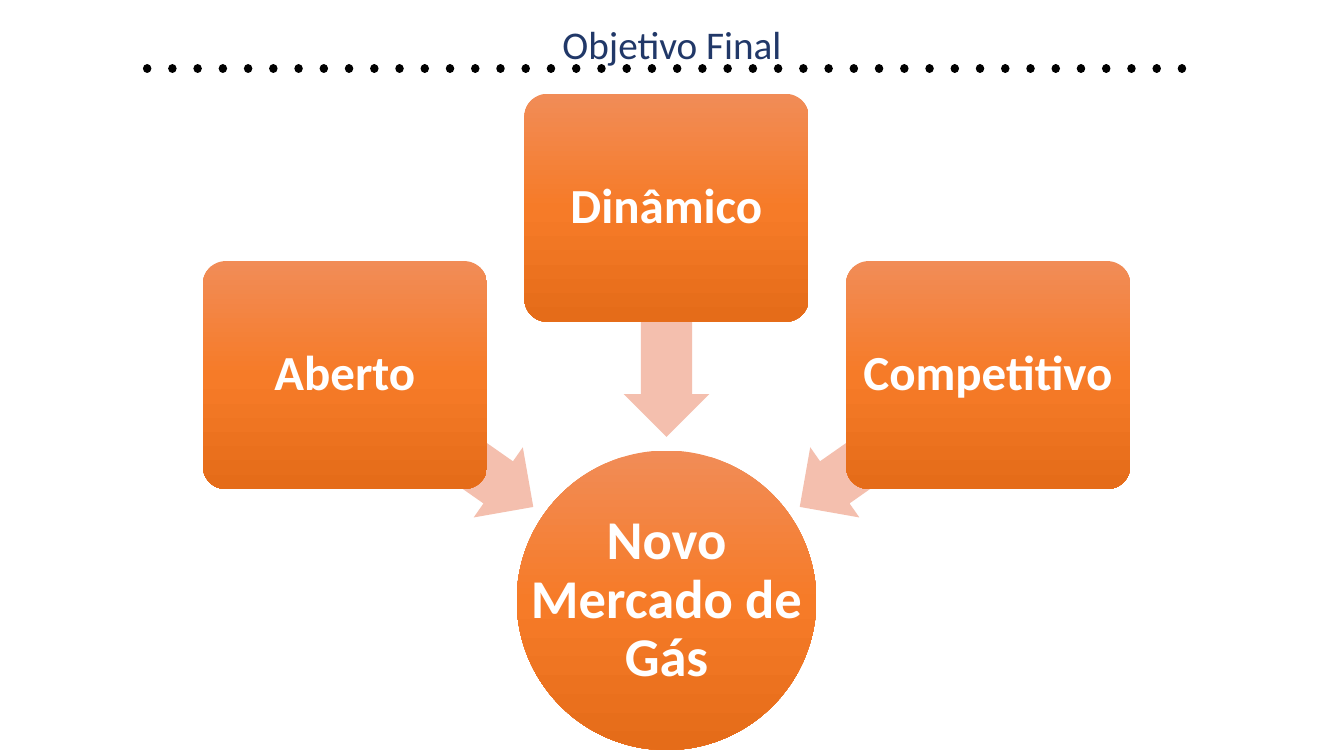
from copy import deepcopy
from dataclasses import dataclass

from lxml import etree
from pptx import Presentation
from pptx.dml.color import RGBColor
from pptx.enum.shapes import MSO_CONNECTOR, MSO_SHAPE
from pptx.enum.text import MSO_ANCHOR, MSO_AUTO_SIZE, PP_ALIGN
from pptx.oxml.ns import qn
from pptx.util import Pt

STRAIGHT = MSO_CONNECTOR.STRAIGHT
ELLIPSE, ROUNDED, LEFT_ARROW = MSO_SHAPE.OVAL, MSO_SHAPE.ROUNDED_RECTANGLE, MSO_SHAPE.LEFT_ARROW
MIDDLE, CENTER = MSO_ANCHOR.MIDDLE, PP_ALIGN.CENTER
FIT_SHAPE = MSO_AUTO_SIZE.SHAPE_TO_FIT_TEXT

COLORS = {
    "title": "213868",
    "rule": "000000",
    "arrow": "F4BFAE",
    "label": "FFFFFF",
    "top": "F18C57",
    "middle": "F67B28",
    "bottom": "E56C19",
}
GRADIENT = ((0, "top"), (0.5, "middle"), (1, "bottom"))

AXIS = 476.1
COLUMN_STEP = 229.7
ARROW_STEP = 162.4
BOX_WIDTH, BOX_HEIGHT = 203, 162.8
ARROW_LENGTH, ARROW_HEIGHT = 164.2, 61.2
CIRCLE_TOP, CIRCLE_SIZE = 321.8, 214


@dataclass
class Pillar:
    label: str
    column: int
    top: float
    arrow_middle: float
    rotation: float


PILLARS = (
    Pillar("Aberto", -1, 186.5, 315, 215),
    Pillar("Dinâmico", 0, 67, 230, 270),
    Pillar("Competitivo", 1, 186.5, 315, 325),
)


def color(name: str) -> RGBColor:
    return RGBColor.from_string(COLORS[name])


def set_all(target, values: dict) -> None:
    for name, value in values.items():
        setattr(target, name, value)


def write(shape, text: str, size: float, color_name: str, margin: float,
          line_spacing: float, bold: bool) -> None:
    frame = shape.text_frame
    frame.text = text
    sides = ("left", "top", "right", "bottom")
    set_all(frame, {f"margin_{side}": Pt(margin) for side in sides})
    set_all(frame, {"word_wrap": True, "vertical_anchor": MIDDLE})
    paragraph = frame.paragraphs[0]
    set_all(paragraph, {"alignment": CENTER, "line_spacing": line_spacing, "space_before": Pt(0)})
    font = paragraph.runs[0].font
    set_all(font, {"name": "Calibri", "size": Pt(size), "bold": bold})
    font.color.rgb = color(color_name)


def add_plain_shape(slide, kind, left: float, top: float, width: float, height: float):
    shape = slide.shapes.add_shape(kind, Pt(left), Pt(top), Pt(width), Pt(height))
    shape.shadow.inherit = False
    shape.line.fill.background()
    return shape


def fill_gradient(shape) -> None:
    shape.fill.gradient()
    shape.fill.gradient_angle = 270
    stop_list = shape.element.spPr.find(".//" + qn("a:gsLst"))
    stop_list.insert(1, deepcopy(stop_list[0]))
    for stop, (position, name) in zip(shape.fill.gradient_stops, GRADIENT):
        stop.position = position
        stop.color.rgb = color(name)


def add_title(slide) -> None:
    title = slide.shapes.title
    set_all(title, {"left": Pt(0), "top": Pt(7.2), "width": Pt(960), "height": Pt(41.8)})
    write(title, "Objetivo Final", 28, "title", 2.2, 1.2, False)
    title.text_frame.auto_size = FIT_SHAPE


def add_dotted_rule(slide) -> None:
    rule = slide.shapes.add_connector(STRAIGHT, Pt(105.1), Pt(49), Pt(861.8), Pt(49))
    rule.line.width = Pt(6)
    rule.line.color.rgb = color("rule")
    properties = rule.element.spPr
    line = properties.find(qn("a:ln"))
    line.set("cap", "rnd")
    dashes = etree.SubElement(line, qn("a:custDash"))
    etree.SubElement(dashes, qn("a:ds"), d="100000", sp="200000")
    etree.SubElement(properties, qn("a:effectLst"))


def add_goal(slide) -> None:
    bounds = (AXIS - CIRCLE_SIZE / 2, CIRCLE_TOP, CIRCLE_SIZE, CIRCLE_SIZE)
    fill_gradient(add_plain_shape(slide, ELLIPSE, *bounds))
    label = slide.shapes.add_textbox(*map(Pt, bounds))
    write(label, "Novo Mercado de Gás", 39, "label", 2.2, 0.9, True)


def add_pillar(slide, pillar: Pillar) -> None:
    arrow_center = AXIS + pillar.column * ARROW_STEP
    arrow = add_plain_shape(slide, LEFT_ARROW, arrow_center - ARROW_LENGTH / 2,
                            pillar.arrow_middle - ARROW_HEIGHT / 2, ARROW_LENGTH, ARROW_HEIGHT)
    arrow.adjustments[0] = 0.6
    arrow.rotation = pillar.rotation
    arrow.fill.solid()
    arrow.fill.fore_color.rgb = color("arrow")

    box_center = AXIS + pillar.column * COLUMN_STEP
    box = add_plain_shape(slide, ROUNDED, box_center - BOX_WIDTH / 2, pillar.top,
                          BOX_WIDTH, BOX_HEIGHT)
    box.adjustments[0] = 0.1
    fill_gradient(box)
    write(box, pillar.label, 35, "label", 0, 0.9, True)


def main() -> None:
    presentation = Presentation()
    set_all(presentation, {"slide_width": Pt(960), "slide_height": Pt(540)})
    slide = presentation.slides.add_slide(presentation.slide_layouts[5])
    add_title(slide)
    add_dotted_rule(slide)
    add_goal(slide)
    for pillar in PILLARS:
        add_pillar(slide, pillar)
    presentation.save("out.pptx")


if __name__ == "__main__":
    main()
